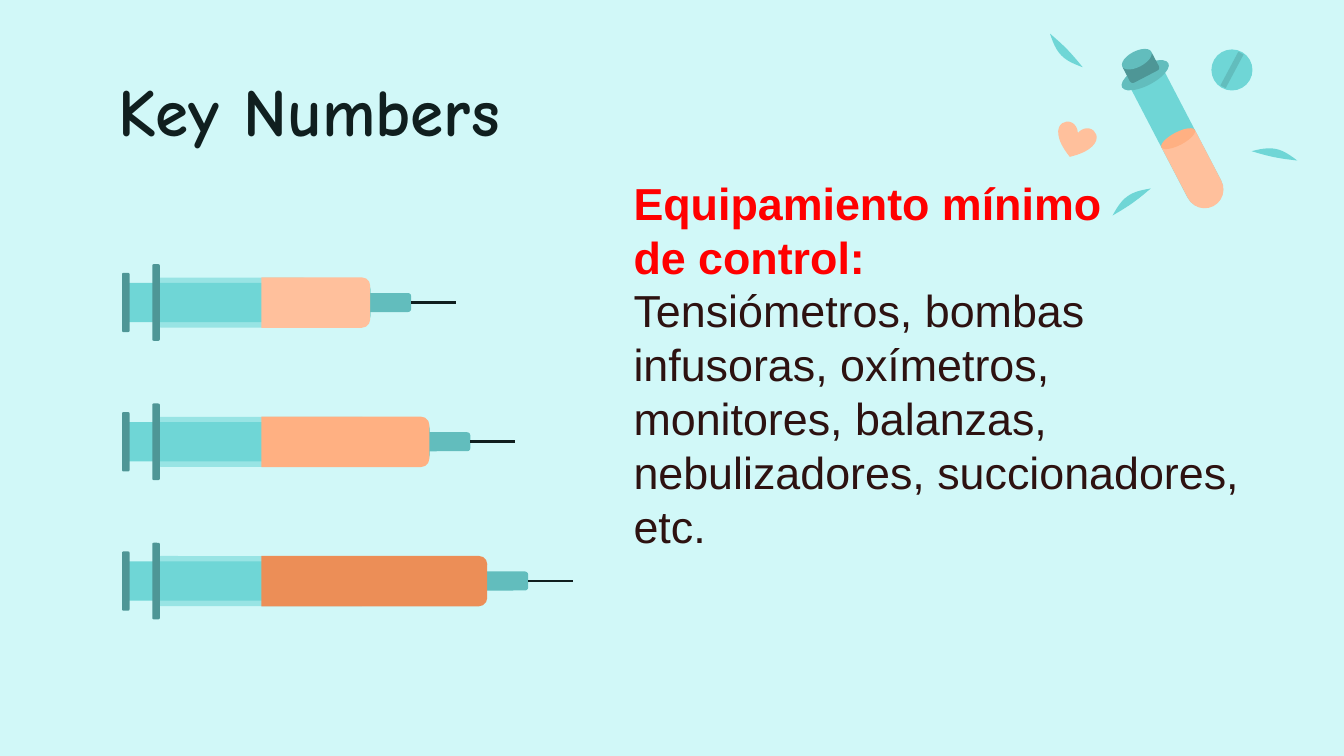
import math

from lxml import etree
from pptx import Presentation
from pptx.dml.color import RGBColor
from pptx.enum.shapes import MSO_CONNECTOR, MSO_SHAPE
from pptx.enum.text import MSO_ANCHOR
from pptx.oxml.ns import qn
from pptx.util import Pt

ROUND = MSO_SHAPE.ROUNDED_RECTANGLE
ROUND_TOP = MSO_SHAPE.ROUND_2_SAME_RECTANGLE
RECTANGLE = MSO_SHAPE.RECTANGLE
OVAL = MSO_SHAPE.OVAL
HEART = MSO_SHAPE.HEART
STRAIGHT = MSO_CONNECTOR.STRAIGHT
TOP = MSO_ANCHOR.TOP

BACKGROUND = RGBColor(0xD1, 0xF8, 0xF8)
INK = RGBColor(0x10, 0x1F, 0x1F)
BODY = RGBColor(0x2D, 0x12, 0x11)
RED = RGBColor(0xFF, 0x00, 0x00)
AQUA = RGBColor(0x6F, 0xD6, 0xD6)
TEAL = RGBColor(0x62, 0xBD, 0xBD)
DARK_TEAL = RGBColor(0x4E, 0x96, 0x96)
PEACH = RGBColor(0xFF, 0xC0, 0x9C)
APRICOT = RGBColor(0xFF, 0xB0, 0x82)
ORANGE = RGBColor(0xEC, 0x8E, 0x57)

TITLE = ["Key Numbers"]
HEADING = ["Equipamiento mínimo", "de control:"]
EQUIPMENT = [
    "Tensiómetros, bombas",
    "infusoras, oxímetros,",
    "monitores, balanzas,",
    "nebulizadores, succionadores,",
    "etc.",
]

# Liquid colour, liquid length, plunger rod length
SYRINGES = [(PEACH, 58.3, 133.2), (APRICOT, 90, 164.9), (ORANGE, 121, 164.9)]
SYRINGE_LEFT, FIRST_AXIS, SYRINGE_PITCH = 65.4, 162.1, 74.6

# Leaf tips: start x, start y, end x, end y
LEAVES = [(596, 115.5, 616.5, 101), (580, 36, 562.5, 18), (670.5, 81, 695, 86)]

# Test tube: shape, colour, distance of its middle from the cap, width, height
TUBE_TOP, TUBE_TILT = (609, 31.7), 27.5
TUBE_PARTS = [
    (ROUND_TOP, AQUA, 50.4, 20.2, 76),
    (ROUND_TOP, PEACH, 68.4, 20.2, 40.8),
    (OVAL, APRICOT, 48, 20.2, 7),
    (OVAL, TEAL, 9.7, 28, 11),
    (ROUND_TOP, DARK_TEAL, 5.5, 17.5, 10),
    (OVAL, TEAL, 0, 17.5, 8.5),
]


def paint(shape, color):
    shape.shadow.inherit = False
    shape.fill.solid()
    shape.fill.fore_color.rgb = color
    shape.line.fill.background()


def add_part(shapes, kind, middle, size, color, rotation=0):
    """Add a filled preset shape around its middle point."""
    (x, y), (width, height) = middle, size
    shape = shapes.add_shape(
        kind, Pt(x - width / 2), Pt(y - height / 2), Pt(width), Pt(height))
    shape.rotation = rotation
    paint(shape, color)
    return shape


def add_leaf(shapes, x1, y1, x2, y2, outer=3.8, inner=-0.7, steps=12):
    """Add a leaf whose two edges are sine arcs between its tips."""
    length = math.hypot(x2 - x1, y2 - y1)
    along = ((x2 - x1) / length, (y2 - y1) / length)
    turns = [(step / steps, outer) for step in range(steps + 1)]
    turns += [(1 - step / steps, inner) for step in range(1, steps)]
    points = []
    for t, bulge in turns:
        offset = bulge * math.sin(math.pi * t)
        points.append((Pt(x1 + along[0] * length * t + along[1] * offset),
                       Pt(y1 + along[1] * length * t - along[0] * offset)))
    builder = shapes.build_freeform(*points[0])
    builder.add_line_segments(points[1:], close=True)
    paint(builder.convert_to_shape(), AQUA)


def add_decoration(slide):
    shapes = slide.shapes.add_group_shape().shapes
    add_part(shapes, HEART, (576, 75.5), (21, 18), PEACH, 18.7)
    for leaf in LEAVES:
        add_leaf(shapes, *leaf)

    # Pill with its groove
    pill = (660, 37.5)
    add_part(shapes, OVAL, pill, (22, 22), AQUA)
    add_part(shapes, RECTANGLE, pill, (3.2, 20.5), TEAL, 28)

    # Test tube, rounded end down
    tilt = math.radians(TUBE_TILT)
    for kind, color, distance, width, height in TUBE_PARTS:
        middle = (TUBE_TOP[0] + distance * math.sin(tilt),
                  TUBE_TOP[1] + distance * math.cos(tilt))
        part = add_part(shapes, kind, middle, (width, height), color, 180 - TUBE_TILT)
        if kind == ROUND_TOP and color != DARK_TEAL:
            part.adjustments[0] = 0.5


def add_bar(shapes, left, axis, width, height, color):
    """Add a rounded bar centred vertically on the syringe axis."""
    return add_part(shapes, ROUND, (left + width / 2, axis), (width, height), color)


def add_syringe(slide, axis, color, liquid_length, rod_length):
    shapes = slide.shapes.add_group_shape().shapes
    left, glass_left, liquid_left = SYRINGE_LEFT, SYRINGE_LEFT + 16.2, SYRINGE_LEFT + 74.6
    nozzle_right = liquid_left + liquid_length + 22

    add_bar(shapes, left, axis, rod_length, 21, AQUA)
    add_bar(shapes, left, axis, 4, 31.7, DARK_TEAL)
    add_bar(shapes, nozzle_right - 47.5, axis, 47.5, 10.2, TEAL)
    glass = add_bar(shapes, glass_left, axis, rod_length - 48.2, 26.8, AQUA)
    glass_color = next(glass._element.spPr.iter(qn("a:srgbClr")))
    etree.SubElement(glass_color, qn("a:alpha"), val="58000")

    # The liquid is an upright shape turned a quarter
    middle = (liquid_left + liquid_length / 2, axis)
    add_part(shapes, ROUND_TOP, middle, (27, liquid_length), color, 90)

    add_bar(shapes, glass_left, axis, 4, 41, DARK_TEAL)
    needle = shapes.add_connector(
        STRAIGHT, Pt(nozzle_right), Pt(axis), Pt(nozzle_right + 23.8), Pt(axis))
    needle.line.color.rgb = INK
    needle.line.width = Pt(1.5)
    etree.SubElement(needle._element.spPr, qn("a:effectLst"))


def add_lines(frame, lines, *, font, size, color, bold=False, spacing=None):
    for line in lines:
        paragraph = frame.paragraphs[0]
        if paragraph.runs:
            paragraph = frame.add_paragraph()
        paragraph.line_spacing = spacing
        run = paragraph.add_run()
        run.text = line
        run.font.name, run.font.size, run.font.bold = font, Pt(size), bold
        run.font.color.rgb = color


def add_frame(slide, left, top, width, height):
    frame = slide.shapes.add_textbox(Pt(left), Pt(top), Pt(width), Pt(height)).text_frame
    frame.word_wrap = True
    frame.vertical_anchor = TOP
    frame.margin_left = frame.margin_right = frame.margin_top = frame.margin_bottom = Pt(7.2)
    return frame


def main():
    presentation = Presentation()
    presentation.slide_width, presentation.slide_height = Pt(720), Pt(405)
    slide = presentation.slides.add_slide(presentation.slide_layouts[6])
    slide.background.fill.solid()
    slide.background.fill.fore_color.rgb = BACKGROUND
    add_decoration(slide)

    # Title and equipment list
    add_lines(add_frame(slide, 56.2, 30.2, 607.7, 45.4), TITLE,
              font="Comic Neue", size=36, color=INK, bold=True)
    body = add_frame(slide, 332.3, 86.9, 361, 217)
    body_format = {"font": "Arial", "size": 24, "spacing": Pt(28.8)}
    add_lines(body, HEADING, color=RED, bold=True, **body_format)
    add_lines(body, EQUIPMENT, color=BODY, **body_format)

    for row, syringe in enumerate(SYRINGES):
        add_syringe(slide, FIRST_AXIS + row * SYRINGE_PITCH, *syringe)

    presentation.save("out.pptx")


if __name__ == "__main__":
    main()
